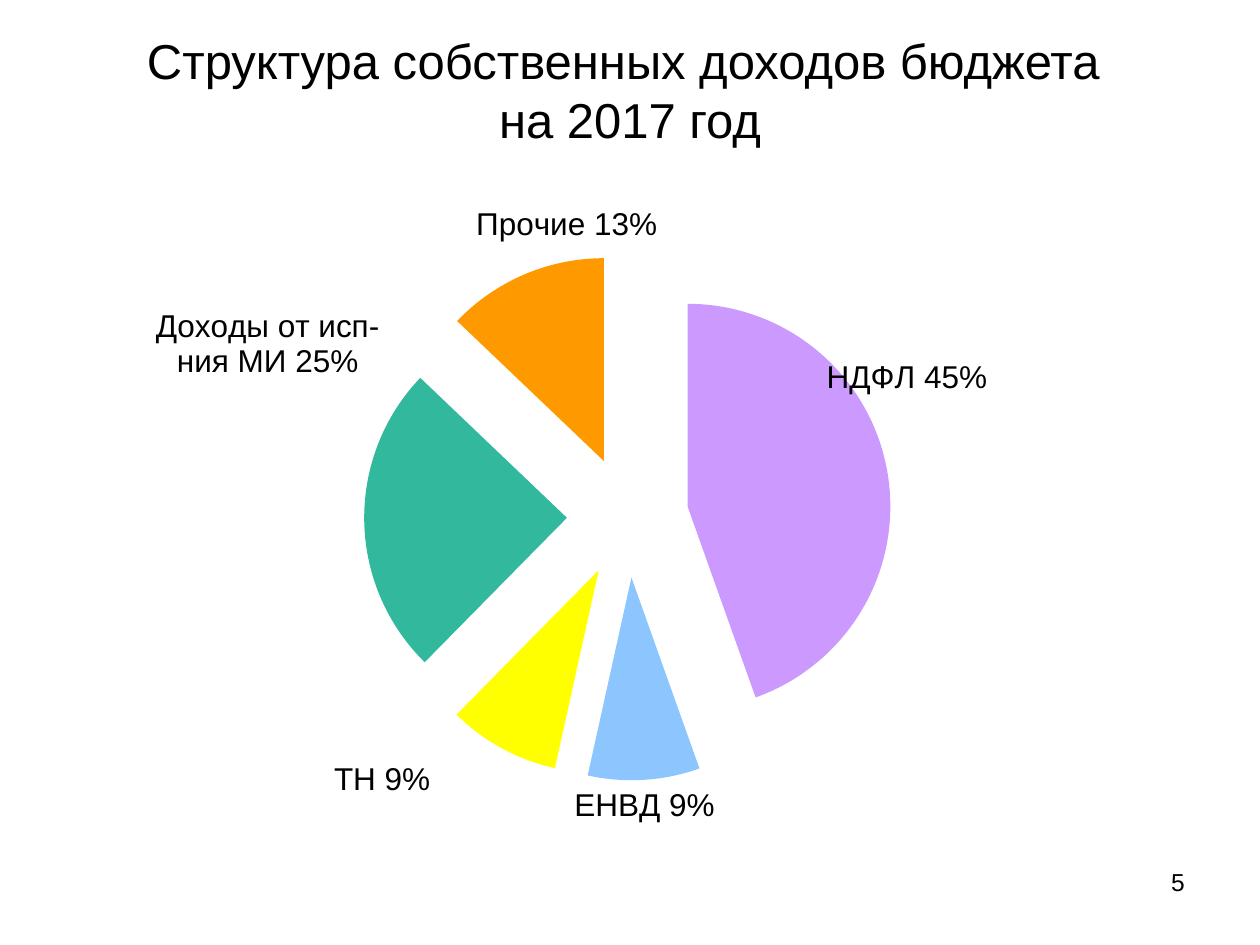
from lxml.etree import SubElement
from pptx import Presentation
from pptx.chart.data import CategoryChartData
from pptx.dml.color import RGBColor
from pptx.enum.chart import XL_CHART_TYPE as ChartType, XL_LABEL_POSITION as LabelPosition
from pptx.enum.text import MSO_ANCHOR as Anchor, PP_ALIGN as Align
from pptx.oxml import parse_xml
from pptx.oxml.ns import nsdecls, qn
from pptx.util import Pt

BLACK = RGBColor(0x00, 0x00, 0x00)
LILAC = RGBColor(0xCC, 0x99, 0xFF)
SKY = RGBColor(0x8D, 0xC6, 0xFF)
YELLOW = RGBColor(0xFF, 0xFF, 0x00)
TEAL = RGBColor(0x32, 0xB8, 0x9C)
ORANGE = RGBColor(0xFF, 0x99, 0x00)
FONT = "Arial"
EXPLOSION = 30

INCOMES = [
    ("НДФЛ", 45, LILAC, (-0.06, -0.12)),
    ("ЕНВД", 9, SKY, (0, 0)),
    ("ТН", 9, YELLOW, (-0.06, 0.01)),
    ("Доходы от исп-ния МИ", 25, TEAL, (0.02, -0.28)),
    ("Прочие", 13, ORANGE, (0.12, -0.04)),
]


def style_font(font, size):
    font.name = FONT
    font.size = Pt(size)
    font.color.rgb = BLACK


def write_text(shape, text, size, align):
    frame = shape.text_frame
    frame.word_wrap = True
    frame.text = text
    paragraph = frame.paragraphs[0]
    paragraph.alignment = align
    for run in paragraph.runs:
        style_font(run.font, size)


def make_layout(**values):
    settings = "".join(f'<c:{tag} val="{value}"/>' for tag, value in values.items())
    return parse_xml(
        f'<c:layout {nsdecls("c")}><c:manualLayout>{settings}</c:manualLayout></c:layout>'
    )


def add_title(slide):
    title = slide.shapes.title
    title.left, title.top, title.width, title.height = Pt(36), Pt(24), Pt(648), Pt(54)
    write_text(title, "Структура собственных доходов бюджета \vна 2017 год", 28, Align.CENTER)
    title.text_frame.vertical_anchor = Anchor.MIDDLE


def format_slice(point, color):
    fill = point.format.fill
    fill.solid()
    fill.fore_color.rgb = color
    point.format.line.fill.background()
    point.data_label.position = LabelPosition.OUTSIDE_END


def format_label(label, offset):
    for tag, shown in (("showVal", 0), ("showCatName", 1), ("showPercent", 1)):
        label.find(qn(f"c:{tag}")).set("val", str(shown))
    SubElement(label, qn("c:separator")).text = " "
    if any(offset):
        label.find(qn("c:idx")).addnext(make_layout(x=offset[0], y=offset[1]))


def add_income_pie(slide):
    data = CategoryChartData()
    data.categories = [income[0] for income in INCOMES]
    data.add_series("Series 1", [income[1] for income in INCOMES])
    chart = slide.shapes.add_chart(
        ChartType.PIE, Pt(31.5), Pt(118), Pt(648), Pt(362), data
    ).chart
    chart.has_legend = False
    chart.has_title = False
    style_font(chart.font, 18)
    pie = chart.plots[0]
    pie.vary_by_categories = True
    series = pie.series[0]
    for index, income in enumerate(INCOMES):
        format_slice(series.points[index], income[2])

    root = series._element
    for slice_xml in root.findall(qn("c:dPt")):
        slice_xml.find(qn("c:spPr")).addprevious(
            parse_xml(f'<c:explosion {nsdecls("c")} val="{EXPLOSION}"/>')
        )
    for label, income in zip(root.iter(qn("c:dLbl")), INCOMES):
        format_label(label, income[3])

    labels = root.find(qn("c:dLbls"))
    leader_lines = labels.find(qn("c:showLeaderLines"))
    if leader_lines is None:
        leader_lines = SubElement(labels, qn("c:showLeaderLines"))
    leader_lines.set("val", "0")

    plot_area = chart._chartSpace.find(f'.//{qn("c:plotArea")}')
    for old_layout in plot_area.findall(qn("c:layout")):
        plot_area.remove(old_layout)
    plot_area.insert(0, make_layout(
        layoutTarget="inner", xMode="edge", yMode="edge", x=0.32, y=0.17, w=0.37, h=0.64
    ))


def add_page_number(slide):
    page_number = slide.shapes.add_textbox(Pt(516), Pt(492), Pt(168), Pt(37.5))
    write_text(page_number, "5", 14, Align.RIGHT)


def main():
    deck = Presentation()
    deck.slide_width, deck.slide_height = Pt(720), Pt(540)
    slide = deck.slides.add_slide(deck.slide_layouts[5])
    add_title(slide)
    add_income_pie(slide)
    add_page_number(slide)
    deck.save("out.pptx")


if __name__ == "__main__":
    main()
